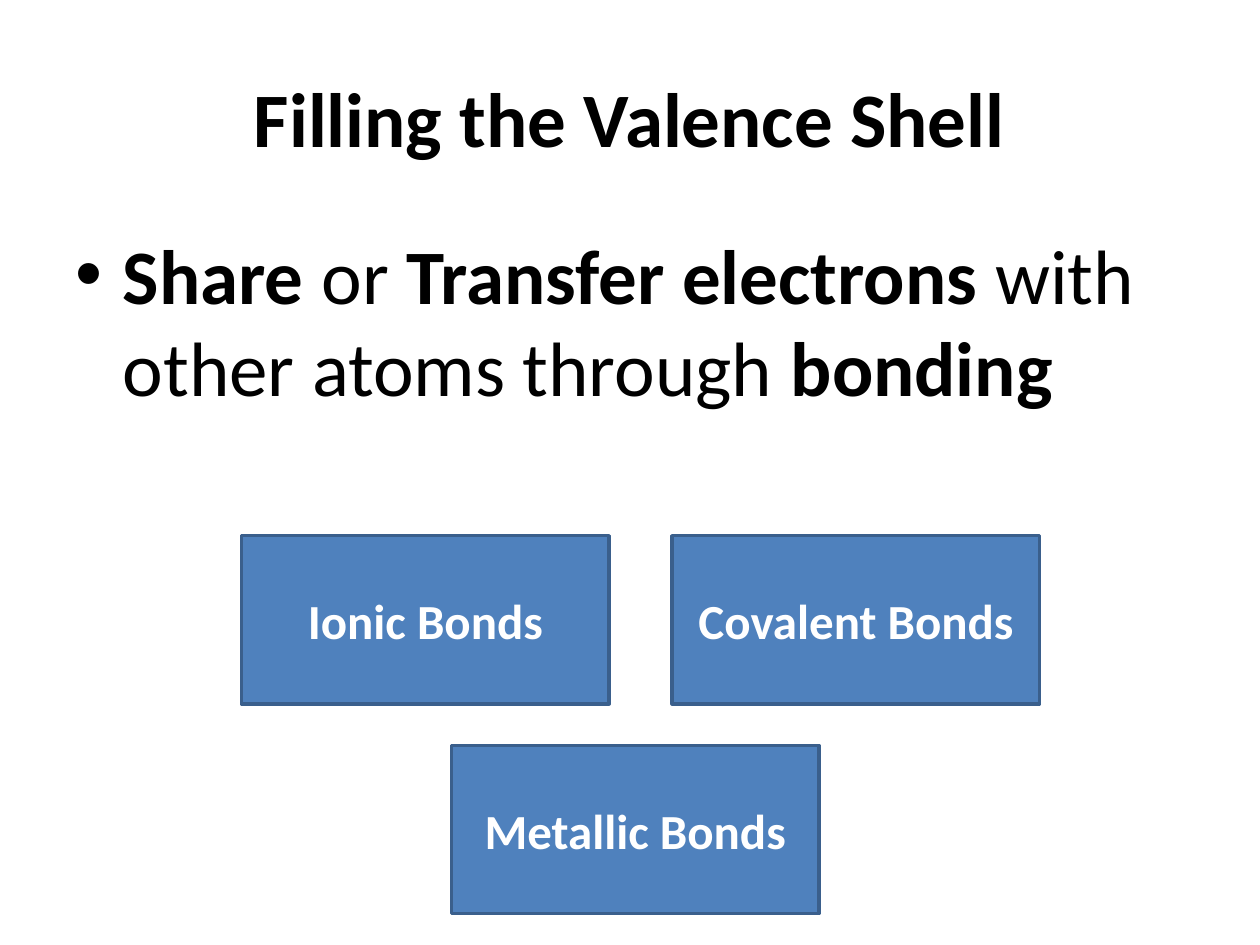
from dataclasses import dataclass

from pptx import Presentation
from pptx.dml.color import RGBColor
from pptx.enum.shapes import MSO_SHAPE
from pptx.enum.text import MSO_ANCHOR, PP_ALIGN
from pptx.util import Cm, Pt

BLACK = RGBColor(0x00, 0x00, 0x00)
WHITE = RGBColor(0xFF, 0xFF, 0xFF)
BLUE = RGBColor(0x4F, 0x81, 0xBD)
DARK_BLUE = RGBColor(0x3A, 0x5F, 0x8C)
FONT = "Calibri"
BOX_WIDTH, BOX_HEIGHT = Cm(7.41), Cm(3.39)


@dataclass
class BondBox:
    label: str
    left: float
    top: float


BONDS = [
    BondBox("Ionic Bonds", 4.87, 10.8),
    BondBox("Covalent Bonds", 13.55, 10.8),
    BondBox("Metallic Bonds", 9.1, 15.03),
]

# Body text with its bold flag
STATEMENT = [
    ("Share", True),
    (" or ", False),
    ("Transfer electrons ", True),
    ("with other atoms through ", False),
    ("bonding", True),
]


def format_run(r, size: int, color: RGBColor, bold: bool = True) -> None:
    r.font.name = FONT
    r.font.size = Pt(size)
    r.font.bold = bold
    r.font.color.rgb = color


def place(sp, left: float, top: float, width: float, height: float) -> None:
    sp.left, sp.top = Cm(left), Cm(top)
    sp.width, sp.height = Cm(width), Cm(height)


def draw_bond(s, bond: BondBox) -> None:
    sp = s.shapes.add_shape(MSO_SHAPE.RECTANGLE, Cm(bond.left), Cm(bond.top),
                            BOX_WIDTH, BOX_HEIGHT)
    sp.shadow.inherit = False
    sp.fill.solid()
    sp.fill.fore_color.rgb = BLUE
    sp.line.color.rgb = DARK_BLUE
    sp.line.width = Pt(2)
    tf = sp.text_frame
    tf.text = bond.label
    tf.vertical_anchor = MSO_ANCHOR.MIDDLE
    p = tf.paragraphs[0]
    p.alignment = PP_ALIGN.CENTER
    format_run(p.runs[0], 28, WHITE)


def main() -> None:
    prs = Presentation()
    prs.slide_width, prs.slide_height = Cm(25.4), Cm(19.05)
    s = prs.slides.add_slide(prs.slide_layouts[1])

    # Title
    title = s.shapes.title
    place(title, 1.27, 0.76, 22.86, 3.18)
    title.text_frame.text = "Filling the Valence Shell"
    format_run(title.text_frame.paragraphs[0].runs[0], 44, BLACK)

    # Bulleted statement
    body = s.placeholders[1]
    place(body, 1.27, 4.45, 22.86, 12.57)
    p = body.text_frame.paragraphs[0]
    for text, bold in STATEMENT:
        r = p.add_run()
        r.text = text
        format_run(r, 44, BLACK, bold)

    # Bond types
    for bond in BONDS:
        draw_bond(s, bond)

    prs.save("out.pptx")


if __name__ == "__main__":
    main()
